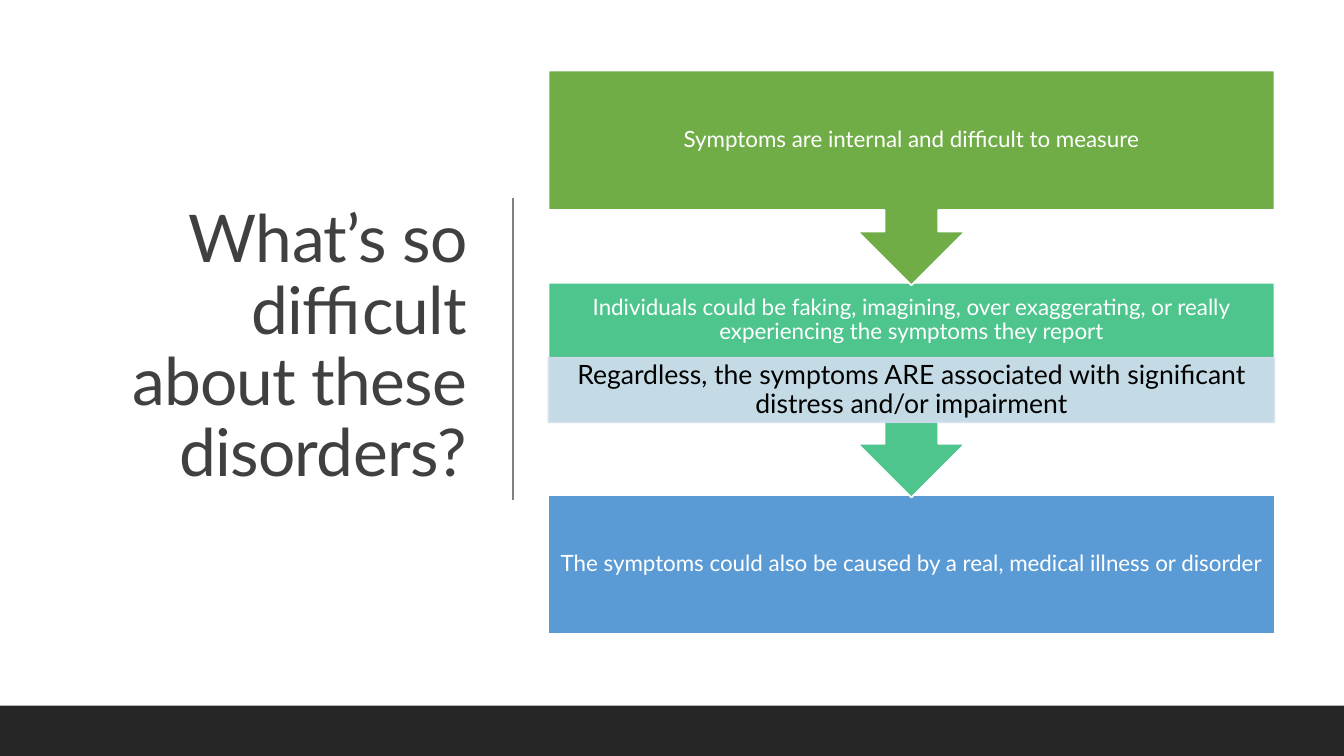
from lxml import etree
from pptx import Presentation
from pptx.dml.color import RGBColor
from pptx.enum.shapes import MSO_CONNECTOR, MSO_SHAPE
from pptx.enum.text import MSO_ANCHOR, MSO_AUTO_SIZE, PP_ALIGN
from pptx.oxml.ns import qn
from pptx.util import Inches, Pt

RECT, CALLOUT = MSO_SHAPE.RECTANGLE, MSO_SHAPE.UP_ARROW_CALLOUT
STRAIGHT = MSO_CONNECTOR.STRAIGHT
MIDDLE, NO_FIT = MSO_ANCHOR.MIDDLE, MSO_AUTO_SIZE.NONE
CENTER, RIGHT = PP_ALIGN.CENTER, PP_ALIGN.RIGHT

COLORS = {
    "white": "FFFFFF", "black": "000000", "title": "404040", "rule": "808080",
    "footer": "262626", "green": "70AD47", "teal": "4DC58D", "blue": "5B9BD5",
    "pale": "D2DEEF",
}
FONT = "Lato"
GRID = 100
STEP_LEFT, STEP_WIDTH = 40.81, 54.01
STEP_TOP, STEP_PITCH = 9.33, 28.07
BOX_ROWS, CALLOUT_ROWS = 18.4, 28.4
STEP_INSETS, NOTE_INSETS = (0.12, 0.12), (0.15, 0.03)


class FlowSlide:
    """Draws styled elements on one slide laid out on a 100 by 100 grid."""

    def __init__(self, deck):
        self.deck = deck
        self.slide = deck.slides.add_slide(deck.slide_layouts[5])
        background = self.slide.background.fill
        background.solid()
        background.fore_color.rgb = self.color("white")

    def color(self, key):
        return RGBColor.from_string(COLORS[key])

    def place(self, left, top, width, height):
        column, row = self.deck.slide_width / GRID, self.deck.slide_height / GRID
        return [round(n) for n in (left * column, top * row, width * column, height * row)]

    def set_text(self, holder, text, size, color, align=CENTER, insets=STEP_INSETS):
        side, edge = (Inches(inset) for inset in insets)
        frame = holder.text_frame
        frame_format = {
            "word_wrap": True, "auto_size": NO_FIT, "vertical_anchor": MIDDLE,
            "margin_left": side, "margin_right": side,
            "margin_top": edge, "margin_bottom": edge,
        }
        for name, value in frame_format.items():
            setattr(frame, name, value)
        paragraph = frame.paragraphs[0]
        paragraph.alignment, paragraph.line_spacing = align, 0.9
        run = paragraph.add_run()
        run.text = text
        for name, value in {"name": FONT, "size": Pt(size), "bold": False}.items():
            setattr(run.font, name, value)
        run.font.color.rgb = self.color(color)
        return run

    def title(self, area, text):
        heading = self.slide.shapes.title
        for name, value in zip(("left", "top", "width", "height"), self.place(*area)):
            setattr(heading, name, value)
        run = self.set_text(heading, text, 47, "title", RIGHT, (0.1, 0.05))
        run.font._element.set("spc", "-50")

    def block(self, area, fill, outline=None, kind=RECT, turn=0, opacity=None):
        block = self.slide.shapes.add_shape(kind, *self.place(*area))
        block.shadow.inherit = False
        block.rotation = turn
        block.fill.solid()
        block.fill.fore_color.rgb = self.color(fill)
        if outline:
            block.line.color.rgb = self.color(outline)
            block.line.width = Pt(1.25)
        else:
            block.line.fill.background()
        if opacity:
            for tint in block._element.spPr.iter(qn("a:srgbClr")):
                etree.SubElement(tint, qn("a:alpha")).set("val", str(opacity * 1000))
        return block

    def label(self, area, text):
        caption = self.slide.shapes.add_textbox(*self.place(*area))
        self.set_text(caption, text, 16, "white")

    def rule(self, column, top, rows):
        x, y, _, length = self.place(column, top, 0, rows)
        divider = self.slide.shapes.add_connector(STRAIGHT, x, y, x, y + length)
        divider.line.color.rgb = self.color("rule")
        divider.line.width = Pt(1)
        etree.SubElement(divider._element.spPr, qn("a:effectLst"))

    def step(self, index, text, fill, points_down, text_rows=BOX_ROWS):
        top = STEP_TOP + index * STEP_PITCH
        rows = CALLOUT_ROWS if points_down else BOX_ROWS
        kind, turn = (CALLOUT, 180) if points_down else (RECT, 0)
        self.block((STEP_LEFT, top, STEP_WIDTH, rows), fill, "white", kind, turn)
        self.label((STEP_LEFT, top, STEP_WIDTH, text_rows), text)


def main():
    deck = Presentation()
    deck.slide_width, deck.slide_height = Inches(13.33), Inches(7.5)
    page = FlowSlide(deck)
    page.title((5.25, 9.2, 30.23, 73.73), "What’s so difficult about these disorders?")
    page.rule(38.18, 26.13, 40)
    page.block((0, 93.33, GRID, 6.67), "footer")

    page.step(2, "The symptoms could also be caused by a real, medical illness or disorder",
              "blue", False)
    page.step(1, "Individuals could be faking, imagining, over exaggerating, or really "
              "experiencing the symptoms they report", "teal", True, 10)
    reminder = page.block((STEP_LEFT, 47.33, STEP_WIDTH, 8.53), "pale", "pale", opacity=90)
    page.set_text(reminder, "Regardless, the symptoms ARE associated with significant "
                  "distress and/or impairment", 19, "black", insets=NOTE_INSETS)
    page.step(0, "Symptoms are internal and difficult to measure", "green", True)
    deck.save("out.pptx")


if __name__ == "__main__":
    main()
